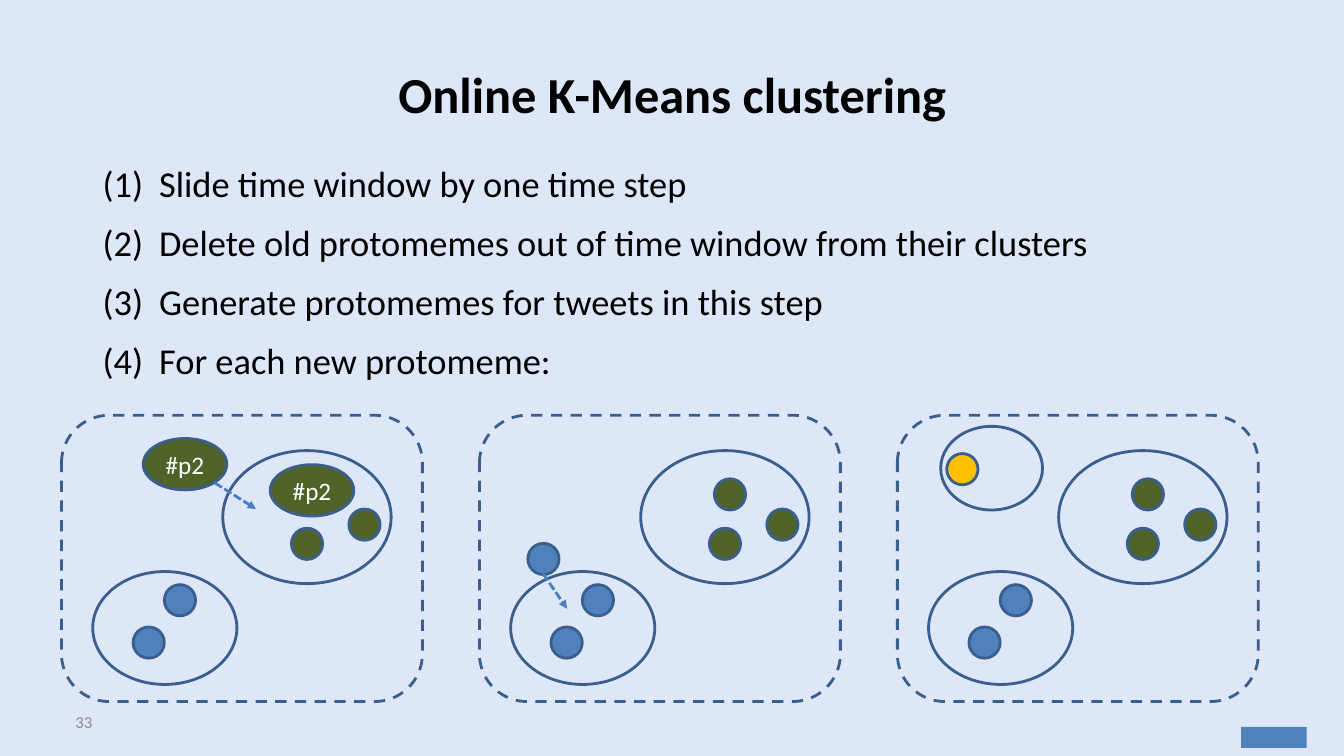
from lxml import etree
from pptx import Presentation
from pptx import util as u
from pptx.dml.color import RGBColor
from pptx.enum import dml, shapes, text
from pptx.oxml import ns

FONT, OUTLINE, ARROW = "Calibri", "3A5F8C", "4B7EBC"
BLUE, GREEN, YELLOW = "4F81BD", "4F6228", "FFC000"
DOT, TAG = (0.31, 0.31), (0.83, 0.51)
PANEL_LEFT, PANEL_TOP, PANEL_PITCH = 0.61, 4.12, 4.145
PANEL_SIZE = (3.58, 2.84)

deck = Presentation()
deck.slide_width, deck.slide_height = u.Inches(13.33), u.Inches(7.5)
page = deck.slides.add_slide(deck.slide_layouts[6])


def paint(color, value):
    color.rgb = RGBColor.from_string(value)


def add_outline(kind, left, top, size, fill=None):
    shape = page.shapes.add_shape(
        kind, u.Inches(left), u.Inches(top), *map(u.Inches, size))
    shape.shadow.inherit = False
    shape.line.width = u.Pt(2)
    paint(shape.line.color, OUTLINE)
    if fill:
        shape.fill.solid()
        paint(shape.fill.fore_color, fill)
    else:
        shape.fill.background()
    return shape


page.background.fill.solid()
paint(page.background.fill.fore_color, "DEE7F8")

# Title, steps and page number
steps = [
    "Slide time window by one time step",
    "Delete old protomemes out of time window from their clusters",
    "Generate protomemes for tweets in this step",
    "For each new protomeme:",
]
middle, top_anchor = text.MSO_ANCHOR.MIDDLE, text.MSO_ANCHOR.TOP
center, left_align = text.PP_ALIGN.CENTER, text.PP_ALIGN.LEFT
for area, lines, size, color, anchor, align in [
    ((0.67, 0.3, 12, 1.25), ["Online K-Means clustering"], 36, "000000", middle, center),
    ((0.92, 1.55, 11.5, 2.4), steps, 26, "000000", top_anchor, left_align),
    ((0.65, 6.96, 3.11, 0.4), ["33"], 12, "8C8C8C", middle, left_align),
]:
    box = page.shapes.add_textbox(*map(u.Inches, area))
    frame = box.text_frame
    frame.word_wrap = True
    frame.vertical_anchor = anchor
    frame.text = "\n".join(lines)
    for index, para in enumerate(frame.paragraphs):
        para.alignment = align
        if lines is steps:
            props = para._p.get_or_add_pPr()
            props.set("marL", str(u.Inches(0.56)))
            props.set("indent", str(u.Inches(-0.56)))
            etree.SubElement(props, ns.qn("a:buAutoNum"), type="arabicParenBoth")
            para.space_before = u.Pt(5 if index else 0)
            para.space_after = u.Pt(6)
        para.font.name, para.font.size = FONT, u.Pt(size)
        para.font.bold = size == 36
        paint(para.font.color, color)

# Three panels; every offset is measured from the panel's top left corner
clusters = [((0.31, 1.55), (1.43, 1.12)), ((1.6, 0.35), (1.67, 1.32))]
shared_dots = [(1.02, 1.68, BLUE), (0.71, 2.1, BLUE), (2.28, 1.12, GREEN), (2.85, 0.93, GREEN)]
third_green = (2.33, 0.63, GREEN)
panels = [
    {"tags": [(2.07, 0.49), (0.81, 0.23)], "arrow": (1.52, 0.67, 1.93, 0.93)},
    {"dots": [third_green, (0.48, 1.27, BLUE)], "arrow": (0.63, 1.57, 0.87, 1.92)},
    {"dots": [third_green, (0.49, 0.38, YELLOW)], "clusters": [((0.43, 0.11), (1.01, 0.83))]},
]
oval = shapes.MSO_SHAPE.OVAL
for column, panel in enumerate(panels):
    left = PANEL_LEFT + column * PANEL_PITCH
    frame_shape = add_outline(
        shapes.MSO_SHAPE.ROUNDED_RECTANGLE, left, PANEL_TOP, PANEL_SIZE)
    frame_shape.line.dash_style = dml.MSO_LINE.DASH

    # Clusters and their protomemes
    for (x, y), size in clusters + panel.get("clusters", []):
        add_outline(oval, left + x, PANEL_TOP + y, size)
    for x, y, color in shared_dots + panel.get("dots", []):
        add_outline(oval, left + x, PANEL_TOP + y, DOT, color)
    for x, y in panel.get("tags", []):
        tag = add_outline(oval, left + x, PANEL_TOP + y, TAG, GREEN)
        frame = tag.text_frame
        frame.margin_left = frame.margin_right = 0
        frame.vertical_anchor = middle
        frame.text = "#p2"
        para = frame.paragraphs[0]
        para.alignment = center
        para.font.name, para.font.size = FONT, u.Pt(18)
        paint(para.font.color, "FFFFFF")

    # Arrow of the joining protomeme
    if "arrow" in panel:
        x1, y1, x2, y2 = panel["arrow"]
        arrow = page.shapes.add_connector(
            shapes.MSO_CONNECTOR.STRAIGHT,
            u.Inches(left + x1), u.Inches(PANEL_TOP + y1),
            u.Inches(left + x2), u.Inches(PANEL_TOP + y2))
        arrow.line.width = u.Pt(2)
        paint(arrow.line.color, ARROW)
        arrow.line.dash_style = dml.MSO_LINE.SQUARE_DOT
        etree.SubElement(arrow.line._get_or_add_ln(), ns.qn("a:tailEnd"), type="triangle")
        etree.SubElement(arrow._element.spPr, ns.qn("a:effectLst"))

# Plain mark in the bottom right corner
mark = add_outline(shapes.MSO_SHAPE.RECTANGLE, 12.31, 7.21, (0.65, 0.21), BLUE)
mark.line.fill.background()

deck.save("out.pptx")
